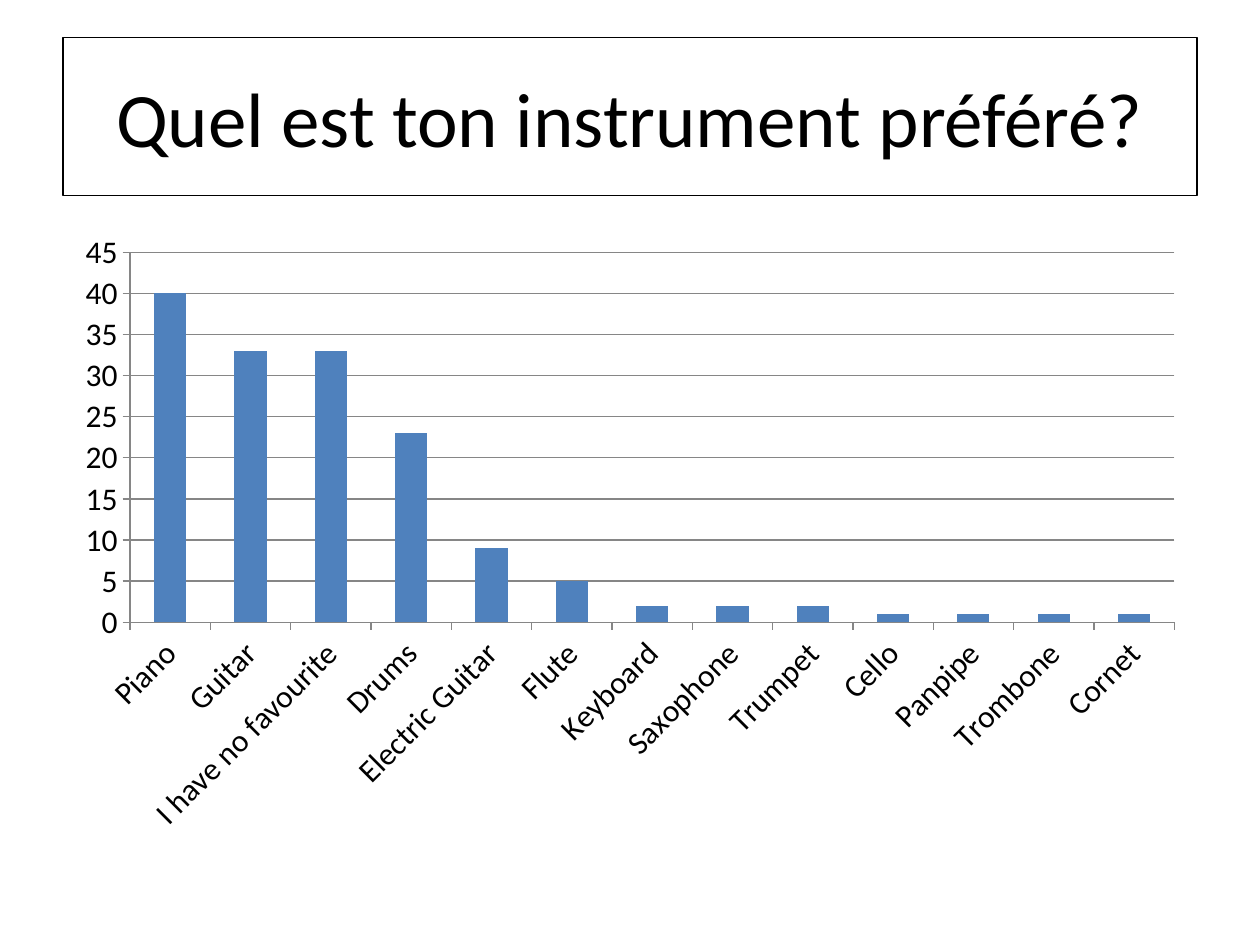
from dataclasses import dataclass

from pptx import Presentation
from pptx.chart.data import CategoryChartData
from pptx.dml.color import RGBColor
from pptx.enum.chart import XL_CHART_TYPE, XL_TICK_MARK
from pptx.enum.text import MSO_ANCHOR, MSO_AUTO_SIZE, PP_ALIGN
from pptx.util import Cm, Pt

COLUMN = XL_CHART_TYPE.COLUMN_CLUSTERED
TICK_OUTSIDE = XL_TICK_MARK.OUTSIDE
TICK_NONE = XL_TICK_MARK.NONE
MIDDLE = MSO_ANCHOR.MIDDLE
NO_AUTOFIT = MSO_AUTO_SIZE.NONE
CENTER = PP_ALIGN.CENTER
TITLE_ONLY = 5


@dataclass(frozen=True)
class Theme:
    """Colours, font and type sizes of the slide."""

    text: RGBColor = RGBColor(0x00, 0x00, 0x00)
    background: RGBColor = RGBColor(0xFF, 0xFF, 0xFF)
    bar: RGBColor = RGBColor(0x4F, 0x81, 0xBD)
    axis: RGBColor = RGBColor(0x86, 0x86, 0x86)
    font: str = "Calibri"
    title_size: Pt = Pt(44)
    chart_size: Pt = Pt(18)
    line_width: Pt = Pt(0.75)


THEME = Theme()
LEFT, WIDTH = Cm(1.27), Cm(22.86)
VOTES = {
    "Piano": 40,
    "Guitar": 33,
    "I have no favourite": 33,
    "Drums": 23,
    "Electric Guitar": 9,
    "Flute": 5,
    "Keyboard": 2,
    "Saxophone": 2,
    "Trumpet": 2,
    "Cello": 1,
    "Panpipe": 1,
    "Trombone": 1,
    "Cornet": 1,
}


def apply_format(target, values):
    """Set each attribute named in values on the target."""
    for name, value in values.items():
        setattr(target, name, value)


def format_font(font, size):
    """Give a font the theme's typeface and colour at one size."""
    apply_format(font, {"name": THEME.font, "size": size, "bold": False})
    font.color.rgb = THEME.text


def format_line(line, color):
    """Give a line the theme's width and one colour."""
    line.color.rgb = color
    line.width = THEME.line_width


def fill_title(slide, text):
    """Place the framed question in the title placeholder."""
    title = slide.shapes.title
    apply_format(title, {"left": LEFT, "top": Cm(0.76), "width": WIDTH, "height": Cm(3.18)})
    format_line(title.line, THEME.text)
    frame = title.text_frame
    apply_format(frame, {"text": text, "vertical_anchor": MIDDLE,
                         "word_wrap": True, "auto_size": NO_AUTOFIT})
    paragraph = frame.paragraphs[0]
    paragraph.alignment = CENTER
    format_font(paragraph.runs[0].font, THEME.title_size)


def format_axis(axis, values):
    """Draw an axis with outer ticks and the given settings."""
    apply_format(axis, {"major_tick_mark": TICK_OUTSIDE, "minor_tick_mark": TICK_NONE, **values})
    format_line(axis.format.line, THEME.axis)


def add_votes_chart(slide, votes):
    """Add the column chart of votes for each instrument."""
    data = CategoryChartData()
    data.categories = list(votes)
    data.add_series("Series 1", list(votes.values()))
    chart = slide.shapes.add_chart(COLUMN, LEFT, Cm(4.45), WIDTH, Cm(12.57), data).chart
    apply_format(chart, {"has_legend": False, "has_title": False})
    format_font(chart.font, THEME.chart_size)
    format_axis(chart.category_axis, {"has_major_gridlines": False})
    format_axis(chart.value_axis, {"has_major_gridlines": True, "minimum_scale": 0,
                                   "maximum_scale": 45, "major_unit": 5})
    format_line(chart.value_axis.major_gridlines.format.line, THEME.axis)
    plot = chart.plots[0]
    apply_format(plot, {"gap_width": 150, "vary_by_categories": False})
    fill = plot.series[0].format.fill
    fill.solid()
    fill.fore_color.rgb = THEME.bar


def main():
    """Build and save the presentation."""
    presentation = Presentation()
    apply_format(presentation, {"slide_width": Cm(25.4), "slide_height": Cm(19.05)})
    slide = presentation.slides.add_slide(presentation.slide_layouts[TITLE_ONLY])
    background = slide.background.fill
    background.solid()
    background.fore_color.rgb = THEME.background
    fill_title(slide, "Quel est ton instrument préféré?")
    add_votes_chart(slide, VOTES)
    presentation.save("out.pptx")


if __name__ == "__main__":
    main()
